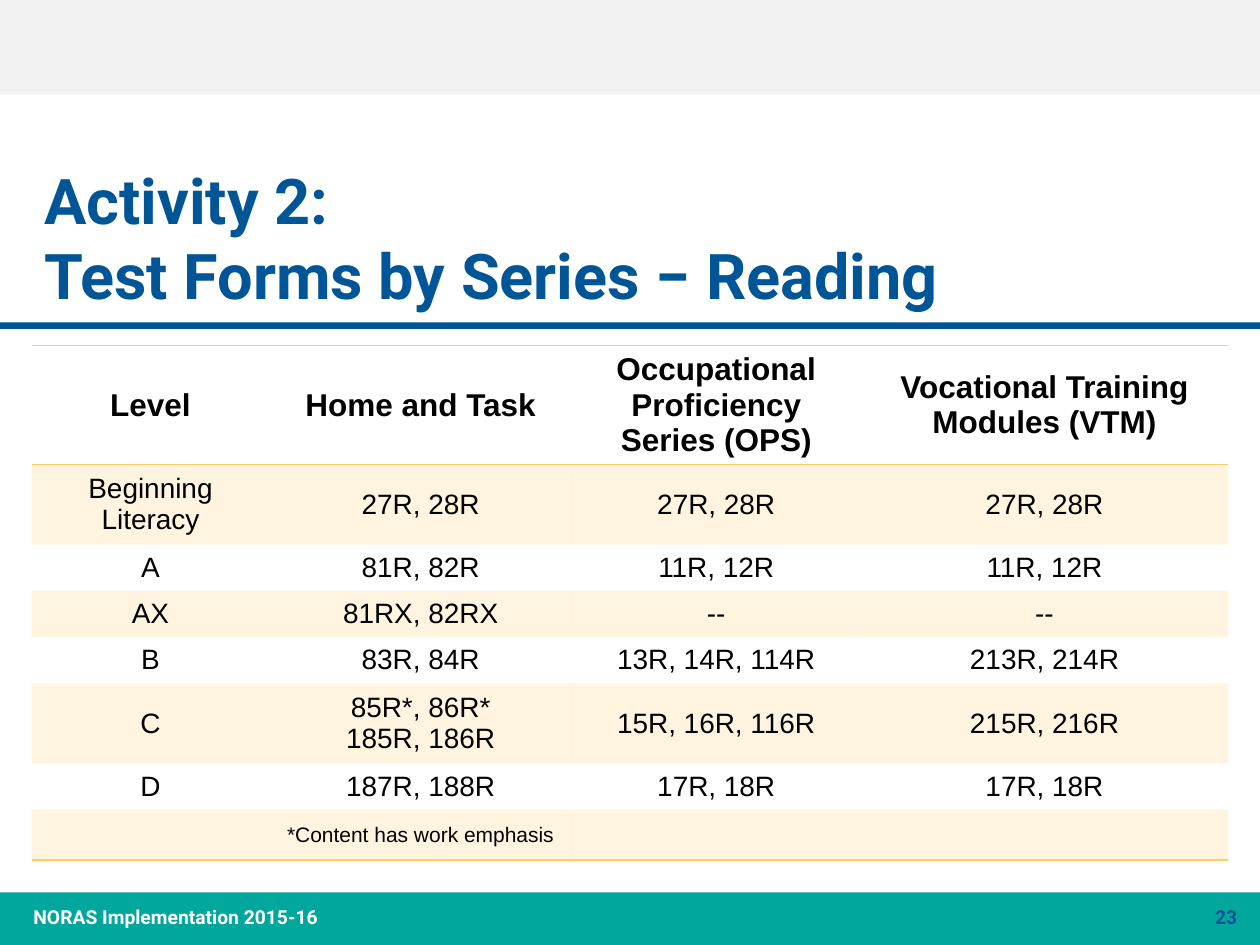
"""Build the slide listing reading test forms by level and series."""
from dataclasses import dataclass

from lxml import etree
from pptx import Presentation
from pptx import util as u
from pptx.dml.color import RGBColor
from pptx.enum import shapes, text
from pptx.oxml.ns import qn

BLUE = RGBColor(0x00, 0x55, 0x96)
GREY = RGBColor(0xF2, 0xF2, 0xF2)
TEAL = RGBColor(0x01, 0xA7, 0x9D)
GOLD = RGBColor(0xFF, 0xCC, 0x66)
WHITE = RGBColor(0xFF, 0xFF, 0xFF)
BLACK = RGBColor(0x00, 0x00, 0x00)
PLAIN = "{2D5ABB26-0587-4C30-8999-92F81FD0307C}"
WIDE, HIGH = 720, 540
COLS = (136, 172.8, 165, 210.2)
LINE = 26.1
TALL = 45.8
ROWS = (68, TALL, LINE, LINE, LINE, TALL, LINE, LINE)
FORMS = (
    ("Level", "Home and Task", "Occupational Proficiency Series (OPS)",
     "Vocational Training Modules (VTM)"),
    ("Beginning Literacy", "27R, 28R", "27R, 28R", "27R, 28R"),
    ("A", "81R, 82R", "11R, 12R", "11R, 12R"),
    ("AX", "81RX, 82RX", "--", "--"),
    ("B", "83R, 84R", "13R, 14R, 114R", "213R, 214R"),
    ("C", "85R*, 86R*\n185R, 186R", "15R, 16R, 116R", "215R, 216R"),
    ("D", "187R, 188R", "17R, 18R", "17R, 18R"),
    ("", "*Content has work emphasis", "", ""),
)


@dataclass
class Band:
    top: float
    high: float
    color: RGBColor


@dataclass
class Label:
    words: str
    left: float
    top: float
    wide: float
    high: float
    size: float
    color: RGBColor
    align: text.PP_ALIGN = text.PP_ALIGN.LEFT
    anchor: text.MSO_ANCHOR = text.MSO_ANCHOR.TOP


BANDS = (
    Band(184.2, 3.8, BLUE),
    Band(0, 54, GREY),
    Band(510, 30, TEAL),
)
LABELS = (
    Label("Activity 2:\vTest Forms by Series − Reading", 18.2, 66, 690, 116,
          36, BLUE, anchor=text.MSO_ANCHOR.BOTTOM),
    Label("23", 546, 513.6, 168, 20, 11, BLUE, text.PP_ALIGN.RIGHT),
    Label("NORAS Implementation 2015-16", 12, 513.6, 246, 24, 11, WHITE),
)


def style(frame, name: str, size: float, color: RGBColor, bold: bool,
          align: text.PP_ALIGN) -> None:
    """Format every paragraph and run of a text frame."""
    for para in frame.paragraphs:
        para.alignment = align
        for run in para.runs:
            font = run.font
            font.name, font.size, font.bold = name, u.Pt(size), bold
            font.color.rgb = color


def draw_band(slide, band: Band) -> None:
    """Draw a full-width bar."""
    bar = slide.shapes.add_shape(shapes.MSO_SHAPE.RECTANGLE, 0,
                                 u.Pt(band.top), u.Pt(WIDE), u.Pt(band.high))
    bar.shadow.inherit = False
    bar.fill.solid()
    bar.fill.fore_color.rgb = band.color
    bar.line.fill.background()


def draw_label(slide, label: Label) -> None:
    """Draw a bold text box."""
    box = slide.shapes.add_textbox(u.Pt(label.left), u.Pt(label.top),
                                   u.Pt(label.wide), u.Pt(label.high))
    frame = box.text_frame
    frame.word_wrap = True
    frame.vertical_anchor = label.anchor
    frame.text = label.words
    style(frame, "Roboto", label.size, label.color, True, label.align)


def tint(cell) -> None:
    """Fill a cell with gold at one fifth opacity."""
    cell.fill.solid()
    cell.fill.fore_color.rgb = GOLD
    shade = cell._tc.tcPr.find(qn("a:solidFill")).find(qn("a:srgbClr"))
    etree.SubElement(shade, qn("a:alpha"), val="20000")


def rule(cell, side: str) -> None:
    """Add a solid gold border on one side of a cell."""
    edge = etree.Element(qn("a:" + side), w=str(int(u.Pt(1))), cap="flat",
                         cmpd="sng", algn="ctr")
    fill = etree.SubElement(edge, qn("a:solidFill"))
    etree.SubElement(fill, qn("a:srgbClr"), val=str(GOLD))
    etree.SubElement(edge, qn("a:prstDash"), val="solid")
    cell._tc.get_or_add_tcPr().insert(0, edge)


def draw_table(slide) -> None:
    """Draw the table of test forms."""
    grid = slide.shapes.add_table(len(ROWS), len(COLS), u.Pt(18), u.Pt(197.5),
                                  u.Pt(sum(COLS)), u.Pt(sum(ROWS))).table
    grid._tbl.tblPr.find(qn("a:tableStyleId")).text = PLAIN
    grid.horz_banding = False
    for col, wide in zip(grid.columns, COLS):
        col.width = u.Pt(wide)
    last = len(ROWS) - 1
    for i, (words, high) in enumerate(zip(FORMS, ROWS)):
        grid.rows[i].height = u.Pt(high)
        size = {0: 18, last: 12}.get(i, 16)
        for j, word in enumerate(words):
            cell = grid.cell(i, j)
            cell.vertical_anchor = text.MSO_ANCHOR.MIDDLE
            cell.text_frame.text = word
            style(cell.text_frame, "Arial", size, BLACK, i == 0,
                  text.PP_ALIGN.CENTER)
            if i % 2:
                tint(cell)
            else:
                cell.fill.background()
            if i in (0, last):
                rule(cell, "lnB")
            if i == 0:
                rule(cell, "lnT")
                cell.margin_top = cell.margin_bottom = u.Pt(1.5)
    grid.cell(last, 2).merge(grid.cell(last, 3))


def main() -> None:
    """Build and save the slide."""
    deck = Presentation()
    deck.slide_width, deck.slide_height = u.Pt(WIDE), u.Pt(HIGH)
    slide = deck.slides.add_slide(deck.slide_layouts[6])
    for band in BANDS:
        draw_band(slide, band)
    for label in LABELS:
        draw_label(slide, label)
    draw_table(slide)
    deck.save("out.pptx")


if __name__ == "__main__":
    main()
